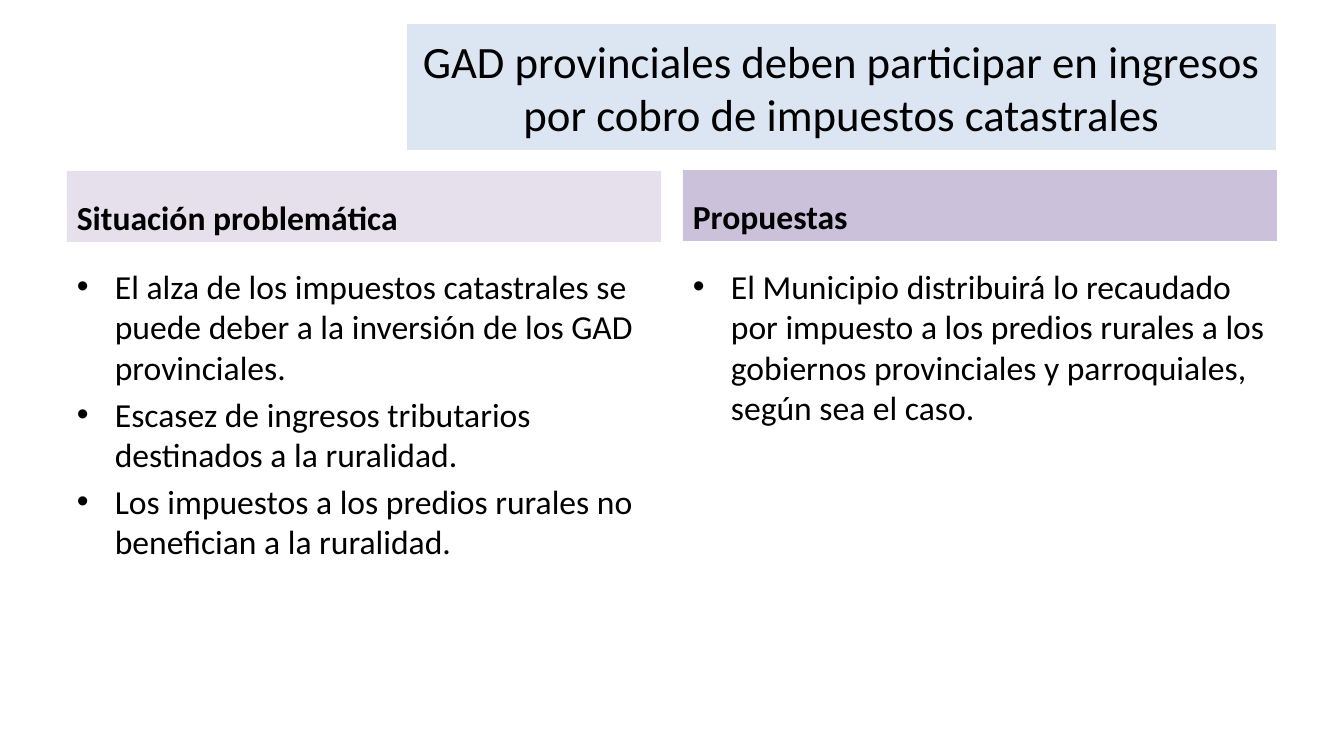
import lxml.etree
import pptx
import pptx.dml.color
import pptx.enum.shapes
import pptx.enum.text
import pptx.oxml.ns
import pptx.util

EMU_PER_PX = 914400 / 100.8
FONT = "Calibri"
COLORS = {
    "text": "000000",
    "title": "DCE6F2",
    "problem": "E6E0EC",
    "proposal": "CCC1DA",
}
TITLE = "GAD provinciales deben participar en ingresos por cobro de impuestos catastrales"
COLUMNS = [
    ("Situación problemática", "problem", (67, 171, 594, 504), [
        "El alza de los impuestos catastrales se puede deber a la inversión de los GAD provinciales.",
        "Escasez de ingresos tributarios destinados a la ruralidad.",
        "Los impuestos a los predios rurales no benefician a la ruralidad.",
    ]),
    ("Propuestas", "proposal", (683, 170, 594, 505), [
        "El Municipio distribuirá lo recaudado por impuesto a los predios rurales "
        "a los gobiernos provinciales y parroquiales, según sea el caso.",
    ]),
]
HEADING_HEIGHT = 71
BULLETS_TOP = 261
BULLET_INDENT = 38


def px(length):
    """Turn a length in px into EMU."""
    return pptx.util.Emu(round(length * EMU_PER_PX))


def rgb(name):
    """Look up a named colour."""
    return pptx.dml.color.RGBColor.from_string(COLORS[name])


def write(paragraph, text, size, bold=False):
    """Set the text of a paragraph and format its runs."""
    paragraph.text = text
    for run in paragraph.runs:
        run.font.name = FONT
        run.font.size = pptx.util.Pt(size)
        run.font.bold = bold
        run.font.color.rgb = rgb("text")


def add_banner(slide, box, text, fill, size, align, anchor, bold=False):
    """Draw a filled band with one line of thought in it."""
    banner = slide.shapes.add_shape(
        pptx.enum.shapes.MSO_SHAPE.RECTANGLE, *map(px, box))
    banner.shadow.inherit = False
    banner.fill.solid()
    banner.fill.fore_color.rgb = rgb(fill)
    banner.line.fill.background()
    banner.text_frame.word_wrap = True
    banner.text_frame.vertical_anchor = anchor
    paragraph = banner.text_frame.paragraphs[0]
    paragraph.alignment = align
    write(paragraph, text, size, bold)


def add_bullets(slide, box, items):
    """Write a bulleted list into the box."""
    frame = slide.shapes.add_textbox(*map(px, box)).text_frame
    frame.word_wrap = True
    for index, item in enumerate(items):
        paragraph = frame.add_paragraph() if index else frame.paragraphs[0]
        properties = paragraph._p.get_or_add_pPr()
        properties.set("marL", str(px(BULLET_INDENT)))
        properties.set("indent", str(-px(BULLET_INDENT)))
        bullet_font = lxml.etree.SubElement(properties, pptx.oxml.ns.qn("a:buFont"))
        bullet_font.set("typeface", "Arial")
        bullet = lxml.etree.SubElement(properties, pptx.oxml.ns.qn("a:buChar"))
        bullet.set("char", "•")
        if index:
            paragraph.space_before = pptx.util.Pt(4.8)
        write(paragraph, item, 24)


def add_column(slide, box, heading, fill, items):
    """Place a heading band over its bulleted list."""
    left, top, width, height = box
    add_banner(slide, (left, top, width, HEADING_HEIGHT), heading, fill, 24,
               pptx.enum.text.PP_ALIGN.LEFT, pptx.enum.text.MSO_ANCHOR.BOTTOM, bold=True)
    add_bullets(slide, (left, BULLETS_TOP, width, top + height - BULLETS_TOP), items)


def main():
    """Build the slide and save it."""
    presentation = pptx.Presentation()
    presentation.slide_width = px(1344)
    presentation.slide_height = px(756)
    slide = presentation.slides.add_slide(presentation.slide_layouts[6])
    add_banner(slide, (407, 24, 869, 126), TITLE, "title", 32,
               pptx.enum.text.PP_ALIGN.CENTER, pptx.enum.text.MSO_ANCHOR.MIDDLE)
    for heading, fill, box, items in COLUMNS:
        add_column(slide, box, heading, fill, items)
    presentation.save("out.pptx")


if __name__ == "__main__":
    main()
